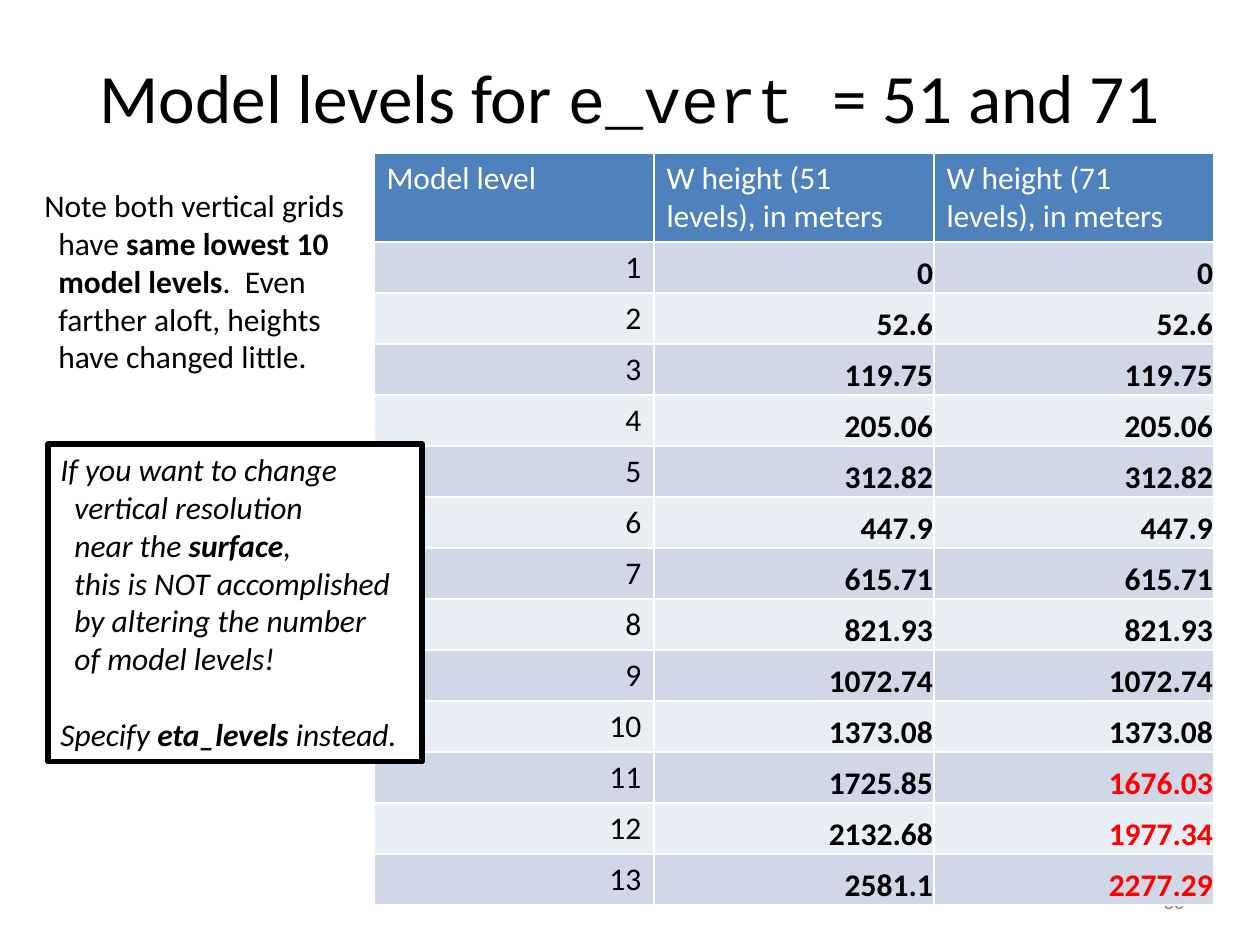
from pptx import Presentation
from pptx import util as u
from pptx.dml.color import RGBColor
from pptx.enum import shapes, text

PX = 914400 / 126
COLORS = {
    "black": "000000", "white": "FFFFFF", "gray": "8C8C8C", "red": "FF0000",
    "header": "4F81BD", "odd": "D0D8E8", "even": "E9EDF4",
}
LEFT, CENTER, RIGHT = text.PP_ALIGN.LEFT, text.PP_ALIGN.CENTER, text.PP_ALIGN.RIGHT
HEADINGS = ["Model level", "W height (51 levels), in meters", "W height (71 levels), in meters"]
SHARED_HEIGHTS = ["0", "52.6", "119.75", "205.06", "312.82", "447.9", "615.71",
                  "821.93", "1072.74", "1373.08"]
UPPER_51 = ["1725.85", "2132.68", "2581.1"]
UPPER_71 = ["1676.03", "1977.34", "2277.29"]
GRID_NOTE = [
    ["Note both vertical grids"],
    ["have ", "*same lowest 10"],
    ["*model levels", ".  Even"],
    ["farther aloft, heights"],
    ["have changed little."],
]
RESOLUTION_NOTE = [
    ["If you want to change"],
    ["vertical resolution"],
    ["near the ", "*surface", ","],
    ["this is NOT accomplished"],
    ["by altering the number"],
    ["of model levels!"],
]
ADVICE = ["Specify ", "*eta_levels", " instead."]


def px(length):
    return u.Emu(round(length * PX))


def rgb(name):
    return RGBColor.from_string(COLORS[name])


def fill(target, color):
    target.fill.solid()
    target.fill.fore_color.rgb = rgb(color)


def write(paragraph, words, size=18, font="Calibri", color="black", bold=False,
          italic=False, align=LEFT):
    paragraph.alignment = align
    run = paragraph.add_run()
    run.text = words
    run.font.size, run.font.name = u.Pt(size), font
    run.font.bold, run.font.italic = bold, italic
    run.font.color.rgb = rgb(color)


def write_line(paragraph, pieces, indent=0, **style):
    paragraph._p.get_or_add_pPr().set("marL", str(px(indent)))
    for piece in pieces:
        write(paragraph, piece.lstrip("*"), bold=piece.startswith("*"), **style)


def write_note(frame, lines, **style):
    frame.word_wrap = False
    frame.auto_size = text.MSO_AUTO_SIZE.SHAPE_TO_FIT_TEXT
    frame.vertical_anchor = text.MSO_ANCHOR.TOP
    for index, pieces in enumerate(lines):
        paragraph = frame.add_paragraph() if index else frame.paragraphs[0]
        write_line(paragraph, pieces, indent=14 if index else 0, **style)


def add_text_frame(slide, left, top, width, height):
    frame = slide.shapes.add_textbox(px(left), px(top), px(width), px(height)).text_frame
    frame.word_wrap = True
    frame.vertical_anchor = text.MSO_ANCHOR.MIDDLE
    return frame


def add_title(slide):
    title = add_text_frame(slide, 63, 17, 1134, 157).paragraphs[0]
    write(title, "Model levels for ", size=39.6, align=CENTER)
    write(title, "e_vert ", size=36, font="Courier New", align=CENTER)
    write(title, "= 51 and 71", size=39.6, align=CENTER)


def add_height_cell(cell, height, color):
    cell.vertical_anchor = text.MSO_ANCHOR.BOTTOM
    cell.margin_left = cell.margin_top = cell.margin_right = px(1)
    cell.margin_bottom = 0
    write(cell.text_frame.paragraphs[0], height, color=color, bold=True, align=RIGHT)


def add_level_table(slide):
    levels = list(zip(SHARED_HEIGHTS + UPPER_51, SHARED_HEIGHTS + UPPER_71))
    table = slide.shapes.add_table(len(levels) + 1, len(HEADINGS), px(374), px(153),
                                   px(840), px(752)).table
    for row in table.rows:
        row.height = px(51)
    table.rows[0].height = px(89)
    for column, heading in enumerate(HEADINGS):
        cell = table.cell(0, column)
        fill(cell, "header")
        write(cell.text_frame.paragraphs[0], heading, color="white")
    for level, (height_51, height_71) in enumerate(levels, 1):
        cells = table.rows[level].cells
        for cell in cells:
            fill(cell, "odd" if level % 2 else "even")
        write(cells[0].text_frame.paragraphs[0], str(level), align=RIGHT)
        add_height_cell(cells[1], height_51, "black")
        add_height_cell(cells[2], height_71, "black" if height_51 == height_71 else "red")


def add_resolution_box(slide):
    box = slide.shapes.add_shape(shapes.MSO_SHAPE.RECTANGLE, px(48), px(444), px(374), px(318))
    box.shadow.inherit = False
    fill(box, "white")
    box.line.color.rgb = rgb("black")
    box.line.width = u.Pt(3)
    write_note(box.text_frame, RESOLUTION_NOTE, italic=True)
    advice = box.text_frame.add_paragraph()
    advice.space_before = px(38)
    write_line(advice, ADVICE, italic=True)


def main():
    deck = Presentation()
    deck.slide_width, deck.slide_height = px(1260), px(945)
    slide = deck.slides.add_slide(deck.slide_layouts[6])
    add_title(slide)
    page_number = add_text_frame(slide, 903, 876, 294, 50)
    write(page_number.paragraphs[0], "36", size=12, color="gray", align=RIGHT)
    add_level_table(slide)
    add_resolution_box(slide)
    write_note(add_text_frame(slide, 32, 180, 329, 204), GRID_NOTE)
    deck.save("out.pptx")


if __name__ == "__main__":
    main()
